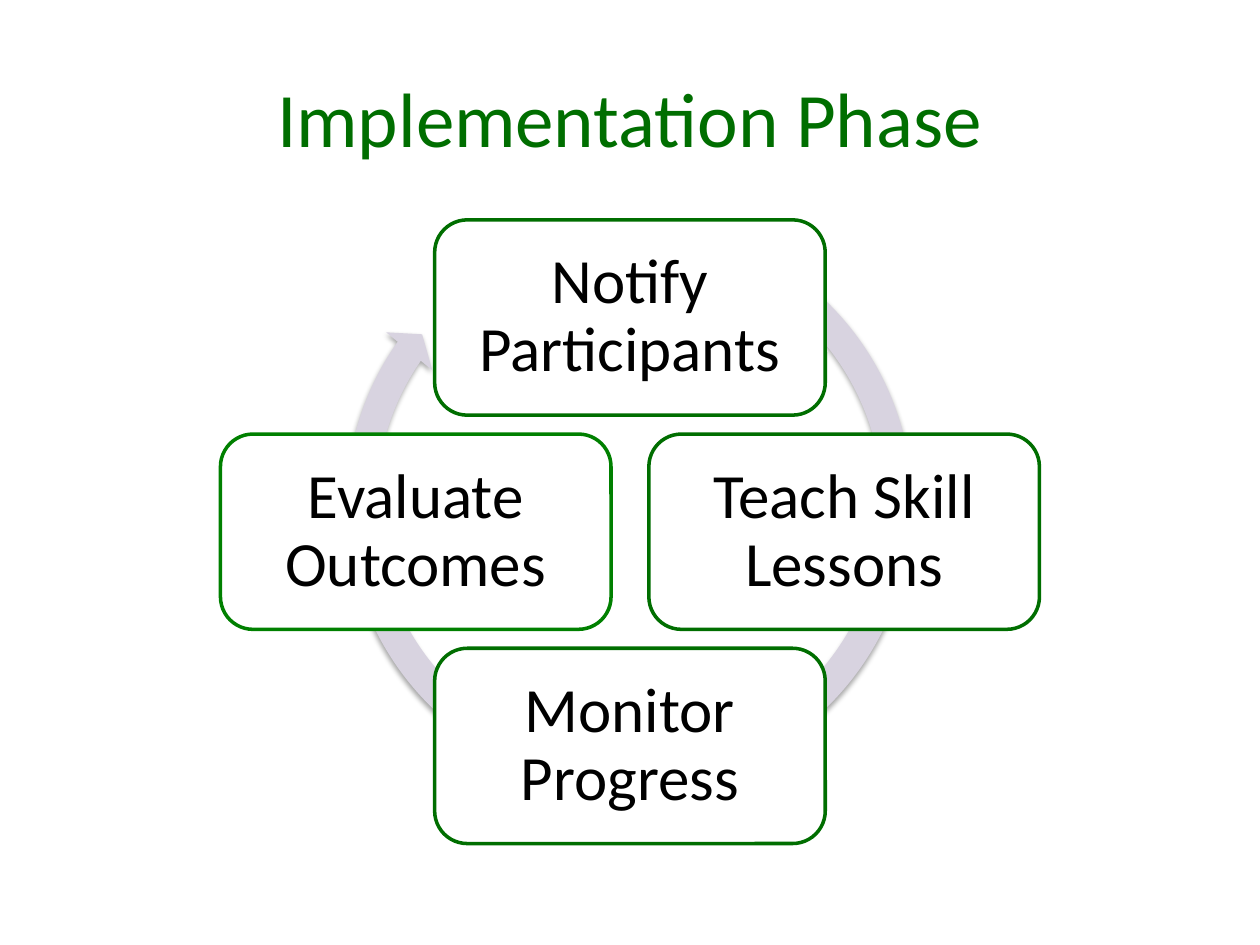
from lxml.etree import SubElement
from pptx import Presentation
from pptx.dml.color import RGBColor
from pptx.enum.shapes import MSO_SHAPE
from pptx.enum.text import MSO_ANCHOR, PP_ALIGN
from pptx.oxml.ns import qn
from pptx.util import Inches, Pt

TITLE = "Implementation Phase"
GREEN = "006E00"
STEPS = [
    ("Notify Participants", 0, -1, GREEN),
    ("Teach Skill Lessons", 1, 0, GREEN),
    ("Monitor Progress", 0, 1, GREEN),
    ("Evaluate Outcomes", -1, 0, "008000"),
]
CENTER_X, CENTER_Y = 5, 4.22
STEP_SPACING = 1.7
BOX_WIDTH, BOX_HEIGHT = 3.1, 1.55
ARROW_BOX = (2.63, 1.64, 4.73, 4.73)
ARROW_ADJUSTMENTS = (0.05, 2.73, 128.92, 179.9, 0.05)


def color(value):
    return RGBColor.from_string(value)


def write_text(shape, text, size, hex_color, margin, line_spacing):
    frame = shape.text_frame
    frame.text = text
    frame.word_wrap = True
    frame.vertical_anchor = MSO_ANCHOR.MIDDLE
    frame.margin_left = frame.margin_right = Inches(margin)
    frame.margin_top = frame.margin_bottom = Inches(margin)
    paragraph = frame.paragraphs[0]
    paragraph.alignment = PP_ALIGN.CENTER
    paragraph.line_spacing = line_spacing
    font = paragraph.runs[0].font
    font.name = "Calibri"
    font.size = Pt(size)
    font.color.rgb = color(hex_color)


def add_soft_shadow(shape):
    effects = shape._element.spPr.find(qn("a:effectLst"))
    shadow = SubElement(effects, qn("a:outerShdw"), blurRad=str(Pt(3.1)),
                        dist=str(Pt(1.8)), dir="5400000", rotWithShape="0")
    black = SubElement(shadow, qn("a:srgbClr"), val="000000")
    SubElement(black, qn("a:alpha"), val="35000")


def add_filled_shape(slide, preset, box, fill):
    shape = slide.shapes.add_shape(preset, *map(Inches, box))
    shape.shadow.inherit = False
    shape.fill.solid()
    shape.fill.fore_color.rgb = color(fill)
    return shape


def add_cycle_arrow(slide):
    arrow = add_filled_shape(slide, MSO_SHAPE.CIRCULAR_ARROW, ARROW_BOX, "D8D3E0")
    arrow.line.fill.background()
    for index, value in enumerate(ARROW_ADJUSTMENTS):
        arrow.adjustments[index] = value
    add_soft_shadow(arrow)


def add_step(slide, text, column, row, outline):
    left = CENTER_X + column * STEP_SPACING - BOX_WIDTH / 2
    top = CENTER_Y + row * STEP_SPACING - BOX_HEIGHT / 2
    step = add_filled_shape(slide, MSO_SHAPE.ROUNDED_RECTANGLE,
                            (left, top, BOX_WIDTH, BOX_HEIGHT), "FFFFFF")
    step.line.color.rgb = color(outline)
    step.line.width = Pt(2)
    write_text(step, text, 36, "000000", 0.15, 0.9)


def main():
    presentation = Presentation()
    presentation.slide_width = Inches(10)
    presentation.slide_height = Inches(7.5)
    slide = presentation.slides.add_slide(presentation.slide_layouts[6])
    title = slide.shapes.add_textbox(*map(Inches, (0.5, 0.3, 9, 1.25)))
    write_text(title, TITLE, 44, GREEN, 0.05, 1.0)
    add_cycle_arrow(slide)
    for step in STEPS:
        add_step(slide, *step)
    presentation.save("out.pptx")


if __name__ == "__main__":
    main()
